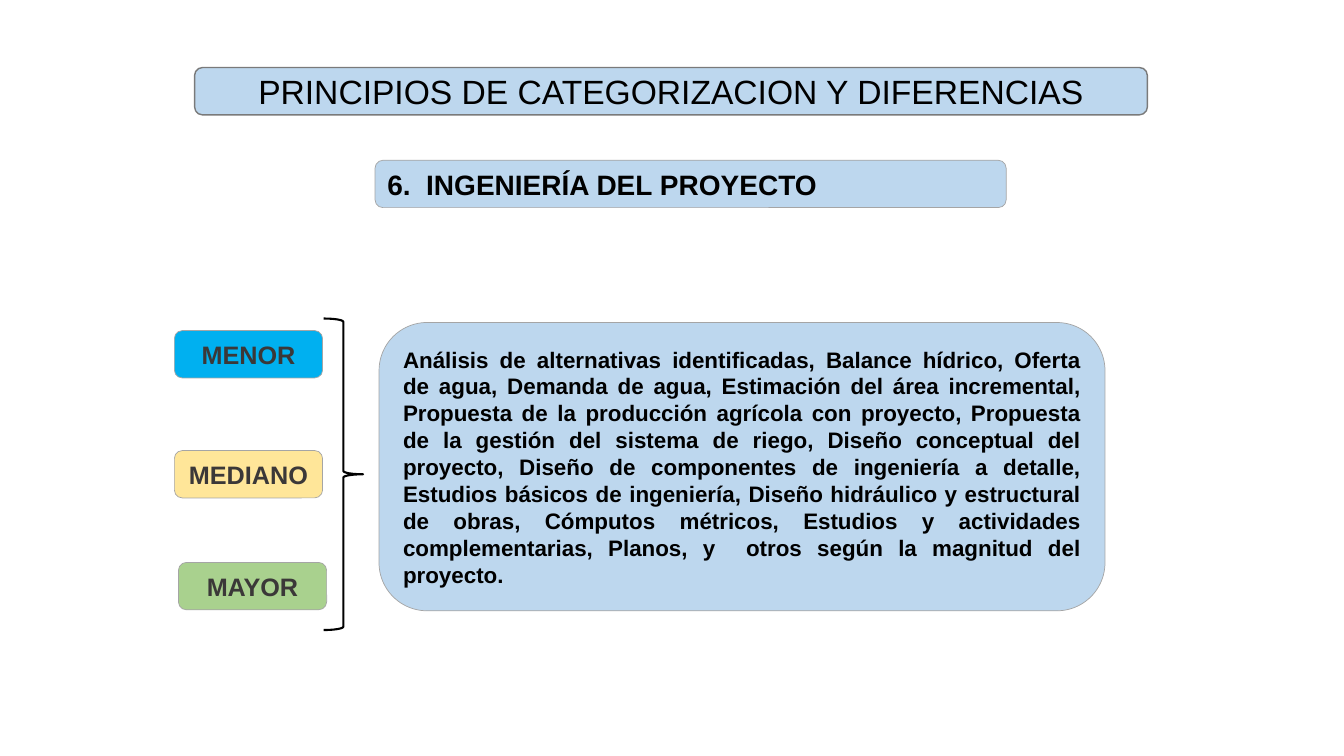
from pptx import Presentation
from pptx.dml.color import RGBColor
from pptx.enum.shapes import MSO_SHAPE
from pptx.enum.text import MSO_ANCHOR, PP_ALIGN
from pptx.util import Inches, Pt

ROUNDED, BRACE = MSO_SHAPE.ROUNDED_RECTANGLE, MSO_SHAPE.LEFT_BRACE
CENTER, JUSTIFY = PP_ALIGN.CENTER, PP_ALIGN.JUSTIFY
MIDDLE = MSO_ANCHOR.MIDDLE

PALE_BLUE = RGBColor(0xBD, 0xD7, 0xEE)
BLUE = RGBColor(0x00, 0xB0, 0xF0)
YELLOW = RGBColor(0xFF, 0xE6, 0x99)
GREEN = RGBColor(0xA9, 0xD1, 0x8E)
GRAY = RGBColor(0xA5, 0xA5, 0xA5)
DARK_GRAY = RGBColor(0x7A, 0x7A, 0x7A)
CHARCOAL = RGBColor(0x3B, 0x38, 0x38)
BLACK = RGBColor(0x00, 0x00, 0x00)

FONT = "Arial"
BAR_H = 0.47

CATEGORIES = [
    ("MENOR", BLUE, 0, 0.12),
    ("MEDIANO", YELLOW, 0, 1.31),
    ("MAYOR", GREEN, 0.04, 2.42),
]
CONTENT = (
    "Análisis de alternativas identificadas, Balance hídrico, Oferta de agua, "
    "Demanda de agua, Estimación del área incremental, Propuesta de la "
    "producción agrícola con proyecto, Propuesta de la gestión del sistema de "
    "riego, Diseño conceptual del proyecto, Diseño de componentes de "
    "ingeniería a detalle, Estudios básicos de ingeniería, Diseño hidráulico y "
    "estructural de obras, Cómputos métricos, Estudios y actividades "
    "complementarias, Planos, y  otros según la magnitud del proyecto."
)


def add_panel(s, box, text, size, align, fill=PALE_BLUE, color=BLACK,
              bold=True, line=GRAY, line_width=0.5):
    sp = s.shapes.add_shape(ROUNDED, *map(Inches, box))
    sp.shadow.inherit = False
    sp.fill.solid()
    sp.fill.fore_color.rgb = fill
    sp.line.color.rgb = line
    sp.line.width = Pt(line_width)
    tf = sp.text_frame
    tf.word_wrap = True
    tf.vertical_anchor = MIDDLE
    p = tf.paragraphs[0]
    p.alignment = align
    r = p.add_run()
    r.text = text
    r.font.name = FONT
    r.font.size = Pt(size)
    r.font.bold = bold
    r.font.color.rgb = color


def add_headings(s, left, top, width):
    add_panel(s, (left, top, width, BAR_H),
              "PRINCIPIOS DE CATEGORIZACION Y DIFERENCIAS", 24, CENTER,
              bold=False, line=DARK_GRAY, line_width=1)
    add_panel(s, (left + 1.79, top + 0.92, 6.26, BAR_H),
              "6.  INGENIERÍA DEL PROYECTO", 20, JUSTIFY)


def add_categories(s, left, top, height):
    label_w = 1.47
    for name, fill, dx, dy in CATEGORIES:
        add_panel(s, (left + dx, top + dy, label_w, BAR_H), name, 18, CENTER,
                  fill=fill, color=CHARCOAL)
    brace = s.shapes.add_shape(BRACE, Inches(left + label_w + 0.01),
                               Inches(top), Inches(0.39), Inches(height))
    brace.rotation = 180
    brace.shadow.inherit = False
    brace.fill.background()
    brace.line.color.rgb = BLACK
    brace.line.width = Pt(1.5)


def main():
    prs = Presentation()
    prs.slide_width, prs.slide_height = Inches(13.33), Inches(7.5)
    s = prs.slides.add_slide(prs.slide_layouts[6])
    add_headings(s, 1.93, 0.67, 9.45)
    add_categories(s, 1.73, 3.16, 3.09)
    add_panel(s, (3.76, 3.2, 7.2, 2.86), CONTENT, 16, JUSTIFY)
    prs.save("out.pptx")


if __name__ == "__main__":
    main()
